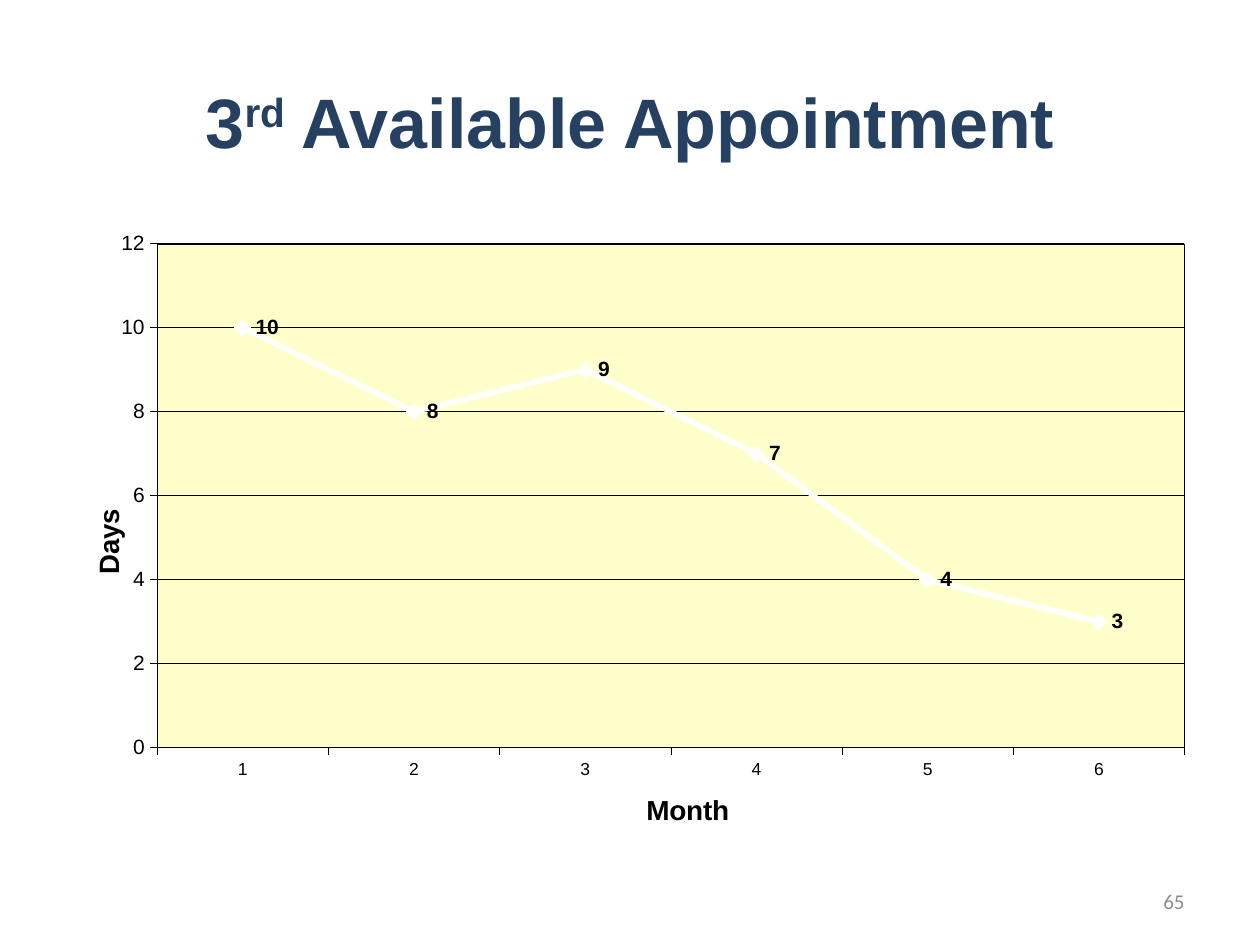
from lxml.etree import fromstring
from pptx import Presentation
from pptx.chart.data import CategoryChartData
from pptx.dml.color import RGBColor
from pptx.enum.chart import XL_CHART_TYPE, XL_LABEL_POSITION, XL_MARKER_STYLE, XL_TICK_MARK
from pptx.enum.text import MSO_ANCHOR, PP_ALIGN
from pptx.oxml.ns import nsdecls, qn
from pptx.util import Pt

PX = 914400 // 126
COLORS = {"title": "254061", "number": "8C8C8C", "ink": "000000",
          "plot": "FFFFCC", "series": "FFFFFF"}


def rgb(name):
    """Return a named colour."""
    return RGBColor.from_string(COLORS[name])


def emu(box):
    """Turn a box in px into EMU."""
    return [v * PX for v in box]


def style(font, size, color, bold=False, name="Arial"):
    """Set the look of a font."""
    font.name, font.size, font.bold = name, Pt(size), bold
    font.color.rgb = rgb(color)


def add_text(s, box, runs, align, size, color, bold=False, name="Arial"):
    """Place one paragraph of (text, baseline) runs in the box."""
    tf = s.shapes.add_textbox(*emu(box)).text_frame
    tf.word_wrap = True
    tf.vertical_anchor = MSO_ANCHOR.MIDDLE
    p = tf.paragraphs[0]
    p.alignment = align
    for text, baseline in runs:
        r = p.add_run()
        r.text = text
        style(r.font, size, color, bold, name)
        if baseline:
            r._r.get_or_add_rPr().set("baseline", str(baseline * 1000))


def set_layout(parent, index, target="", **fractions):
    """Fix the position of a chart part as fractions of the chart."""
    for old in parent.findall(qn("c:layout")):
        parent.remove(old)
    modes = "".join(f'<c:{k}Mode val="edge"/>' for k in "xy")
    sizes = "".join(f'<c:{k} val="{v}"/>' for k, v in fractions.items())
    parent.insert(index, fromstring(
        f'<c:layout {nsdecls("c")}><c:manualLayout>{target}{modes}{sizes}'
        '</c:manualLayout></c:layout>'))


def style_axis(axis, title, size, x, y):
    """Set the title, ticks and line of an axis."""
    tf = axis.axis_title.text_frame
    r = tf.paragraphs[0].add_run()
    r.text = title
    style(r.font, 16, "ink", True)
    set_layout(axis.axis_title._element, 1, x=x, y=y)
    style(axis.tick_labels.font, size, "ink")
    axis.major_tick_mark = XL_TICK_MARK.OUTSIDE
    axis.minor_tick_mark = XL_TICK_MARK.NONE
    axis.format.line.color.rgb = rgb("ink")
    axis.format.line.width = Pt(0.25)


def style_series(plot):
    """Set the line, markers and value labels of the series."""
    ser = plot.series[0]
    ser.smooth = False
    ser.format.line.color.rgb = rgb("series")
    ser.format.line.width = Pt(3)
    ser.marker.style = XL_MARKER_STYLE.DIAMOND
    ser.marker.size = 9
    ser.marker.format.fill.solid()
    ser.marker.format.fill.fore_color.rgb = rgb("series")
    ser.marker.format.line.color.rgb = rgb("series")
    labels = ser.data_labels
    labels.show_value = True
    labels.position = XL_LABEL_POSITION.RIGHT
    style(labels.font, 12, "ink", True)


def add_days_chart(s, box):
    """Place the line chart of days by month in the box."""
    data = CategoryChartData()
    data.categories = [str(month) for month in range(1, 7)]
    data.add_series("Series 1", [10, 8, 9, 7, 4, 3])
    chart = s.shapes.add_chart(XL_CHART_TYPE.LINE_MARKERS, *emu(box), data).chart
    chart.has_legend = chart.has_title = False
    style(chart.font, 8, "ink")
    plot = chart.plots[0]
    plot.vary_by_categories = False
    style_series(plot)
    style_axis(chart.category_axis, "Month", 10, 0.51, 0.94)
    axis = chart.value_axis
    style_axis(axis, "Days", 12, 0.02, 0.48)
    axis.minimum_scale, axis.maximum_scale, axis.major_unit = 0, 12, 2
    grid = axis.major_gridlines.format.line
    grid.color.rgb = rgb("ink")
    grid.width = Pt(0.25)
    area = chart._chartSpace.chart.plotArea
    set_layout(area, 0, '<c:layoutTarget val="inner"/>', x=0.083, y=0.055, w=0.906, h=0.82)
    area.append(fromstring(
        f'<c:spPr {nsdecls("c", "a")}>'
        f'<a:solidFill><a:srgbClr val="{COLORS["plot"]}"/></a:solidFill>'
        f'<a:ln w="3175"><a:solidFill><a:srgbClr val="{COLORS["ink"]}"/></a:solidFill></a:ln>'
        '</c:spPr>'))


def main():
    """Build the slide."""
    prs = Presentation()
    prs.slide_width, prs.slide_height = emu((1260, 945))
    s = prs.slides.add_slide(prs.slide_layouts[6])
    add_text(s, (63, 42, 1134, 157), [("3", 0), ("rd", 30), (" Available Appointment", 0)],
             PP_ALIGN.CENTER, 40, "title", True)
    add_days_chart(s, (63, 210, 1134, 624))
    add_text(s, (903, 876, 294, 50), [("65", 0)], PP_ALIGN.RIGHT, 12, "number", name="Calibri")
    prs.save("out.pptx")


if __name__ == "__main__":
    main()
